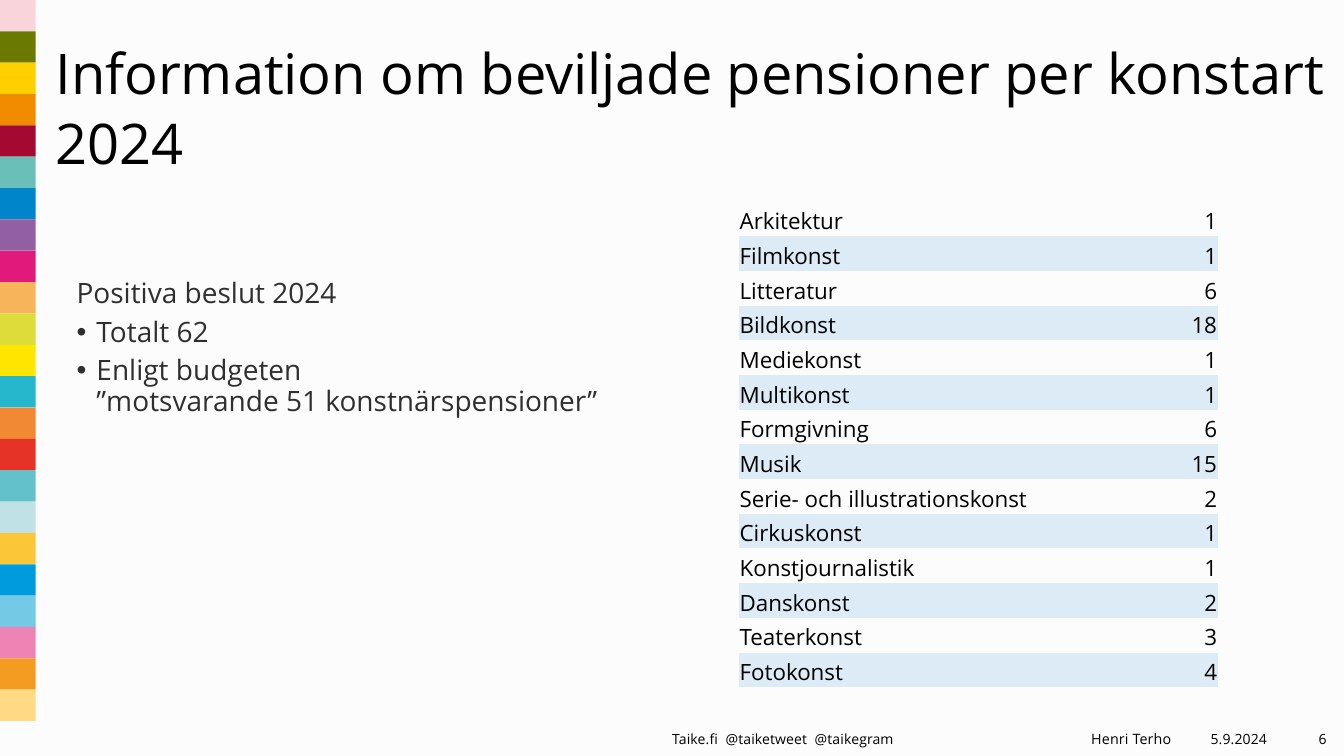
from lxml.etree import SubElement as Sub
from pptx import Presentation
from pptx.dml.color import RGBColor
from pptx.enum.shapes import MSO_SHAPE as Kind
from pptx.enum.text import MSO_ANCHOR as Anchor, MSO_AUTO_SIZE as Auto, PP_ALIGN as Align
from pptx.oxml.ns import qn
from pptx.util import Cm, Pt

FONT = "Open Sans"
PLAIN = "{2D5ABB26-0587-4C30-8999-92F81FD0307C}"  # table style without grid
BAND = "DDEBF7"
STRIPES = """F9D5DB 6A7A00 FFCF00 F18B00 A30931 6AC0B8 0084CA 935FA3
    E0197A F8B45B DCDD3A FFE600 27B7CC F18834 E53328 63C1CC C0E2E6 FCC639
    009BDD 74C9E4 EE84B3 F49C21 FFD984""".split()
ARTS = [
    ("Arkitektur", 1), ("Filmkonst", 1), ("Litteratur", 6), ("Bildkonst", 18),
    ("Mediekonst", 1), ("Multikonst", 1), ("Formgivning", 6), ("Musik", 15),
    ("Serie- och illustrationskonst", 2), ("Cirkuskonst", 1),
    ("Konstjournalistik", 1), ("Danskonst", 2), ("Teaterkonst", 3),
    ("Fotokonst", 4),
]
POINTS = [
    ("Positiva beslut 2024", False),
    ("Totalt 62", True),
    ("Enligt budgeten\v”motsvarande 51 konstnärspensioner”", True),
]
FOOT = [  # left, width, text, size, alignment
    (16.94, 6.5, "Taike.fi  @taiketweet  @taikegram", 10, Align.LEFT),
    (23.42, 6.1, "Henri Terho", 10.2, Align.RIGHT),
    (29.54, 2.39, "5.9.2024", 10, Align.RIGHT),
    (31.93, 1.5, "6", 10, Align.RIGHT),
]


def rgb(code):
    return RGBColor.from_string(code)


def write(par, text, size, color="000000", align=Align.LEFT, lead=None, gap=0, track=0):
    """Fill a paragraph; a vertical tab in the text breaks the line."""
    par.text = text
    par.alignment = align
    par.space_before = Pt(gap)
    if lead:
        par.line_spacing = lead
    for cut in par._p.findall(qn("a:br")):
        Sub(cut, qn("a:rPr"), sz=str(size * 100))
    for run in par.runs:
        font = run.font
        font.name, font.size = FONT, Pt(size)
        font.color.rgb = rgb(color)
        if track:
            run._r.get_or_add_rPr().set("spc", str(track))


def place(shape, left, top, width, height, anchor):
    """Set the bounds of a text shape and return its bare frame."""
    shape.left, shape.top = Cm(left), Cm(top)
    shape.width, shape.height = Cm(width), Cm(height)
    frame = shape.text_frame
    frame.word_wrap, frame.auto_size = True, Auto.NONE
    frame.vertical_anchor = anchor
    frame.margin_left = frame.margin_right = 0
    frame.margin_top = frame.margin_bottom = 0
    return frame


def bullet(par, shown):
    props = par._p.get_or_add_pPr()
    inset = Cm(0.5) if shown else 0
    props.set("marL", str(inset))
    props.set("indent", str(-inset))
    if shown:
        Sub(props, qn("a:buFont"), typeface="Arial")
        Sub(props, qn("a:buChar"), char="•")
    else:
        Sub(props, qn("a:buNone"))


def add_stripes(slide):
    high = 0.79
    for i, color in enumerate(STRIPES):
        bar = slide.shapes.add_shape(Kind.RECTANGLE, 0, Cm(i * high), Cm(0.9), Cm(high))
        bar.shadow.inherit = False
        bar.fill.solid()
        bar.fill.fore_color.rgb = rgb(color)
        bar.line.fill.background()


def add_list(shape):
    frame = place(shape, 1.93, 7.04, 14.55, 10.28, Anchor.TOP)
    for i, (text, shown) in enumerate(POINTS):
        par = frame.add_paragraph() if i else frame.paragraphs[0]
        bullet(par, shown)
        write(par, text, 20, color="2F2F2F", lead=0.9, gap=6 if i else 0)


def add_grid(slide):
    high = Cm(12.24)
    grid = slide.shapes.add_table(len(ARTS), 2, Cm(18.62), Cm(5.08), Cm(12.07), high).table
    grid.first_row = grid.horz_banding = False
    grid._tbl.tblPr.find(qn("a:tableStyleId")).text = PLAIN
    grid.columns[0].width, grid.columns[1].width = Cm(9.68), Cm(2.39)
    for i, row in enumerate(grid.rows):
        row.height = high // len(ARTS)
        for cell, value, align in zip(row.cells, ARTS[i], (Align.LEFT, Align.RIGHT)):
            cell.margin_left = cell.margin_right = cell.margin_top = Cm(0.02)
            cell.margin_bottom = 0
            cell.vertical_anchor = Anchor.BOTTOM
            if i % 2:
                cell.fill.solid()
                cell.fill.fore_color.rgb = rgb(BAND)
            else:
                cell.fill.background()
            write(cell.text_frame.paragraphs[0], str(value), 16, align=align)


def add_foot(slide):
    for left, width, text, size, align in FOOT:
        box = slide.shapes.add_textbox(0, 0, 0, 0)
        frame = place(box, left, 18.19, width, 0.86, Anchor.MIDDLE)
        write(frame.paragraphs[0], text, size, align=align, track=10)


def main():
    deck = Presentation()
    deck.slide_width, deck.slide_height = Cm(33.87), Cm(19.05)
    slide = deck.slides.add_slide(deck.slide_layouts[1])
    slide.background.fill.solid()
    slide.background.fill.fore_color.rgb = rgb("FCFCFC")
    add_stripes(slide)
    title = place(slide.shapes.title, 1.4, 0.86, 32.03, 3.56, Anchor.BOTTOM)
    write(title.paragraphs[0], "Information om beviljade pensioner per konstart 2024", 40, lead=Pt(50))
    add_list(slide.placeholders[1])
    add_grid(slide)
    add_foot(slide)
    deck.save("out.pptx")


if __name__ == "__main__":
    main()
